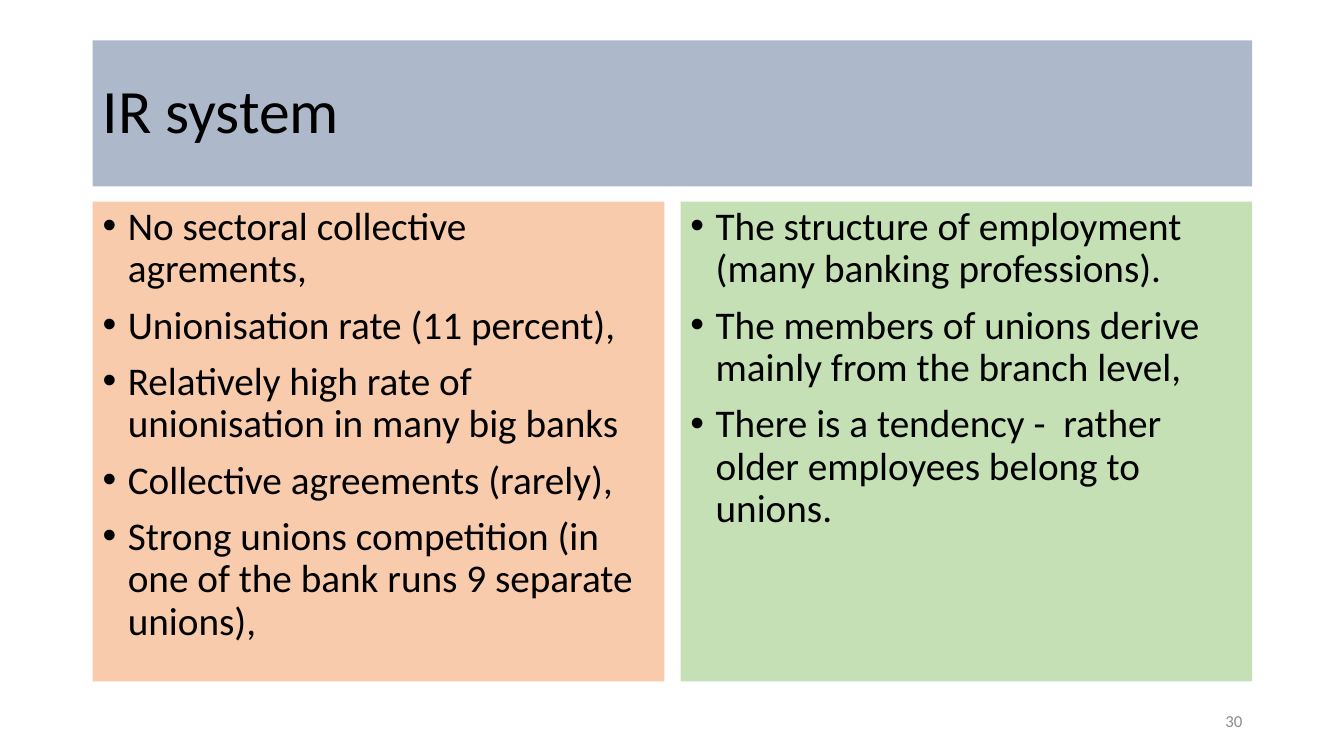
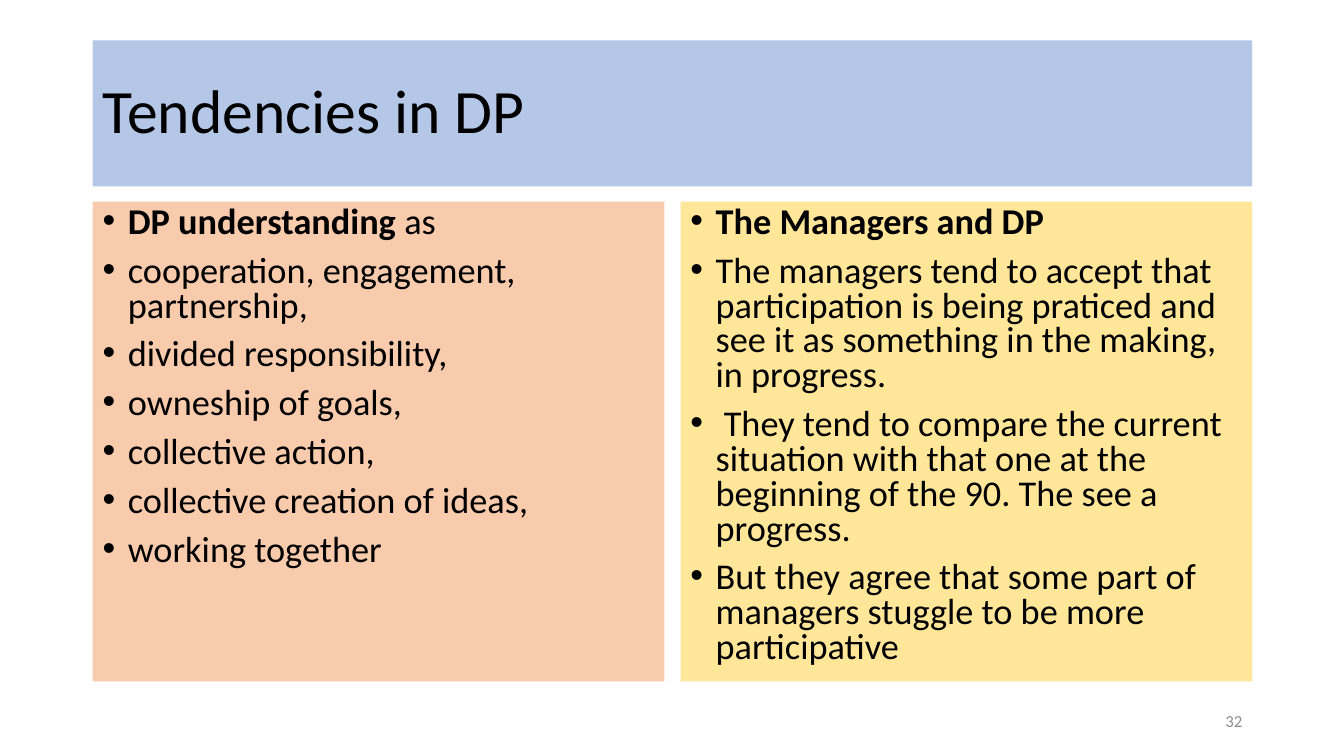
from dataclasses import dataclass

from lxml import etree
from pptx import Presentation
from pptx.dml.color import RGBColor
from pptx.enum.shapes import MSO_SHAPE
from pptx.enum.text import MSO_ANCHOR, PP_ALIGN
from pptx.oxml.ns import qn
from pptx.util import Inches, Pt

RECTANGLE = MSO_SHAPE.RECTANGLE
TOP, MIDDLE = MSO_ANCHOR.TOP, MSO_ANCHOR.MIDDLE
LEFT, RIGHT = PP_ALIGN.LEFT, PP_ALIGN.RIGHT

FONT = "Calibri"
BLACK = RGBColor(0x00, 0x00, 0x00)
GREY = RGBColor(0x8C, 0x8C, 0x8C)
SLATE = RGBColor(0xAD, 0xB9, 0xCA)
BLUE = RGBColor(0xB4, 0xC7, 0xE7)
PEACH = RGBColor(0xF8, 0xCB, 0xAD)
GREEN = RGBColor(0xC5, 0xE0, 0xB4)
YELLOW = RGBColor(0xFF, 0xE6, 0x99)

# Shared layout, in inches
MARGIN, CONTENT_WIDTH = 0.92, 11.5
TITLE_TOP, TITLE_HEIGHT = 0.4, 1.45
PANEL_TOP, PANEL_WIDTH, PANEL_HEIGHT = 2, 5.67, 4.76
PANEL_STEP = CONTENT_WIDTH - PANEL_WIDTH
PANEL_RIGHT_INSET = 0.15
NUMBER_TOP, NUMBER_WIDTH, NUMBER_HEIGHT = 6.95, 3, 0.4
BULLET_INDENT = 0.25


@dataclass(frozen=True)
class Bullet:
    text: str = ""
    lead: str = ""  # bold opening words


@dataclass(frozen=True)
class Panel:
    color: RGBColor
    bullets: list[Bullet]


@dataclass(frozen=True)
class Page:
    title: str
    title_color: RGBColor
    number: str
    text_size: float
    line_spacing: float
    panels: list[Panel]


PAGES = [
    Page("IR system", SLATE, "30", 28, 0.9, [
        Panel(PEACH, [
            Bullet("No sectoral collective agrements,"),
            Bullet("Unionisation rate (11 percent),"),
            Bullet("Relatively high rate of unionisation in many big banks"),
            Bullet("Collective agreements (rarely),"),
            Bullet("Strong unions competition (in one of the bank runs "
                   "9 separate unions),"),
        ]),
        Panel(GREEN, [
            Bullet("The structure of employment (many banking professions)."),
            Bullet("The members of unions derive mainly from the branch level,"),
            Bullet("There is a tendency -  rather older employees belong to unions."),
        ]),
    ]),
    Page("Tendencies in DP", BLUE, "32", 25.9, 0.8, [
        Panel(PEACH, [
            Bullet(" as", lead="DP understanding"),
            Bullet("cooperation, engagement, partnership,"),
            Bullet("divided responsibility,"),
            Bullet("owneship of goals,"),
            Bullet("collective action,"),
            Bullet("collective creation of ideas,"),
            Bullet("working together"),
        ]),
        Panel(YELLOW, [
            Bullet(lead="The Managers and DP"),
            Bullet("The managers tend to accept that participation is being "
                   "praticed and see it as something in the making, in progress."),
            Bullet(" They tend to compare the current situation with that one "
                   "at the beginning of the 90. The see a progress."),
            Bullet("But they agree that some part of managers stuggle to be "
                   "more participative"),
        ]),
    ]),
]


def add_block(slide, left: float, top: float, width: float, height: float,
              color: RGBColor, anchor):
    """Draw a filled rectangle and return its text frame."""
    block = slide.shapes.add_shape(
        RECTANGLE, Inches(left), Inches(top), Inches(width), Inches(height))
    block.shadow.inherit = False
    block.fill.solid()
    block.fill.fore_color.rgb = color
    block.line.fill.background()
    frame = block.text_frame
    frame.word_wrap = True
    frame.vertical_anchor = anchor
    return frame


def add_run(paragraph, text: str, size: float, color: RGBColor = BLACK,
            bold: bool = False) -> None:
    run = paragraph.add_run()
    run.text = text
    run.font.name = FONT
    run.font.size = Pt(size)
    run.font.bold = bold
    run.font.color.rgb = color
    # Digits alone may be drawn in the font of another script
    properties = run._r.get_or_add_rPr()
    for script in ("a:ea", "a:cs"):
        etree.SubElement(properties, qn(script), typeface=FONT)


def set_bullet(paragraph) -> None:
    properties = paragraph._p.get_or_add_pPr()
    properties.set("marL", str(Inches(BULLET_INDENT)))
    properties.set("indent", str(-Inches(BULLET_INDENT)))
    etree.SubElement(properties, qn("a:buFont"), typeface="Arial")
    etree.SubElement(properties, qn("a:buChar"), char="•")


def add_title(slide, page: Page) -> None:
    frame = add_block(slide, MARGIN, TITLE_TOP, CONTENT_WIDTH, TITLE_HEIGHT,
                      page.title_color, MIDDLE)
    paragraph = frame.paragraphs[0]
    paragraph.alignment = LEFT
    paragraph.line_spacing = 0.9
    add_run(paragraph, page.title, 44)


def add_panel(slide, left: float, panel: Panel, page: Page) -> None:
    frame = add_block(slide, left, PANEL_TOP, PANEL_WIDTH, PANEL_HEIGHT,
                      panel.color, TOP)
    frame.margin_right = Inches(PANEL_RIGHT_INSET)
    for index, bullet in enumerate(panel.bullets):
        paragraph = frame.add_paragraph() if index else frame.paragraphs[0]
        paragraph.alignment = LEFT
        paragraph.line_spacing = page.line_spacing
        paragraph.space_before = Pt(10)
        set_bullet(paragraph)
        if bullet.lead:
            add_run(paragraph, bullet.lead, page.text_size, bold=True)
        if bullet.text:
            add_run(paragraph, bullet.text, page.text_size)


def add_page_number(slide, number: str) -> None:
    left = MARGIN + CONTENT_WIDTH - NUMBER_WIDTH
    box = slide.shapes.add_textbox(Inches(left), Inches(NUMBER_TOP),
                                   Inches(NUMBER_WIDTH), Inches(NUMBER_HEIGHT))
    frame = box.text_frame
    frame.word_wrap = True
    frame.vertical_anchor = MIDDLE
    paragraph = frame.paragraphs[0]
    paragraph.alignment = RIGHT
    add_run(paragraph, number, 12, GREY)


def main() -> None:
    presentation = Presentation()
    presentation.slide_width = Inches(13.33)
    presentation.slide_height = Inches(7.5)
    blank = presentation.slide_layouts[6]
    for page in PAGES:
        slide = presentation.slides.add_slide(blank)
        add_title(slide, page)
        for column, panel in enumerate(page.panels):
            add_panel(slide, MARGIN + column * PANEL_STEP, panel, page)
        add_page_number(slide, page.number)
    presentation.save("out.pptx")


if __name__ == "__main__":
    main()
